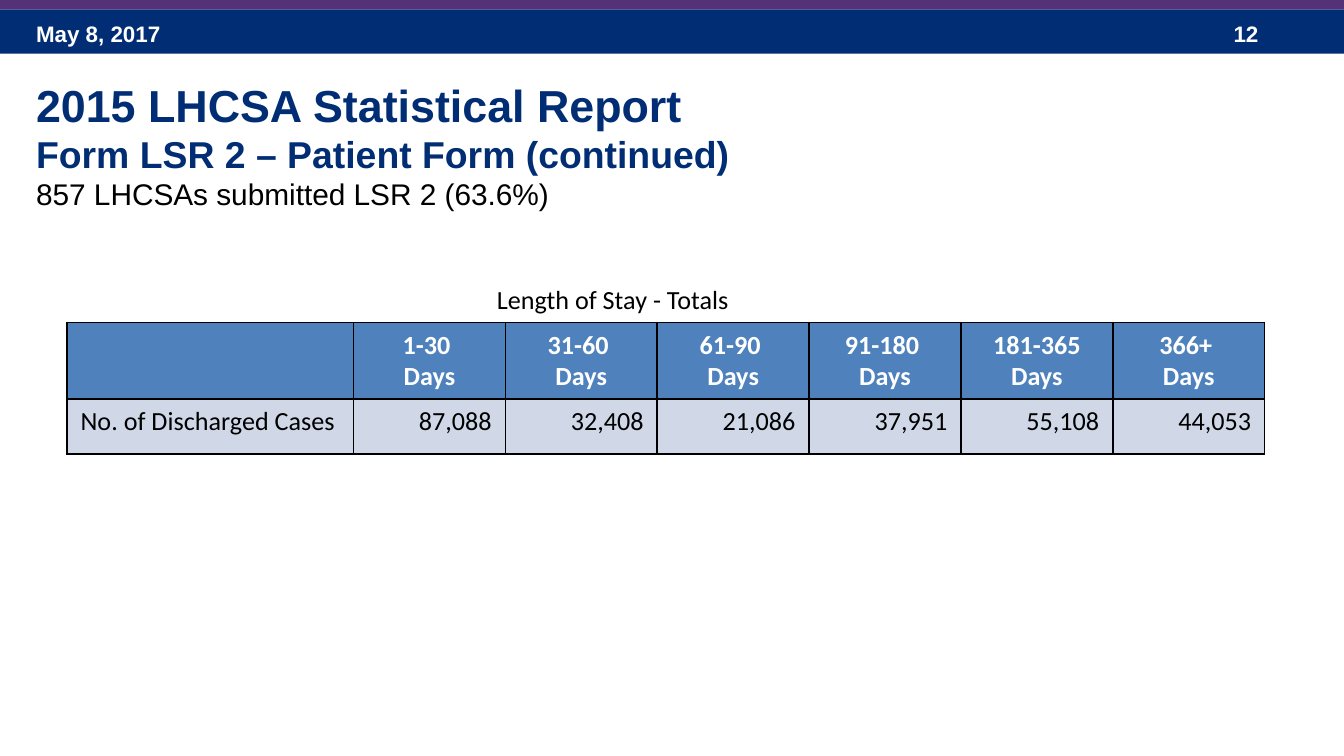
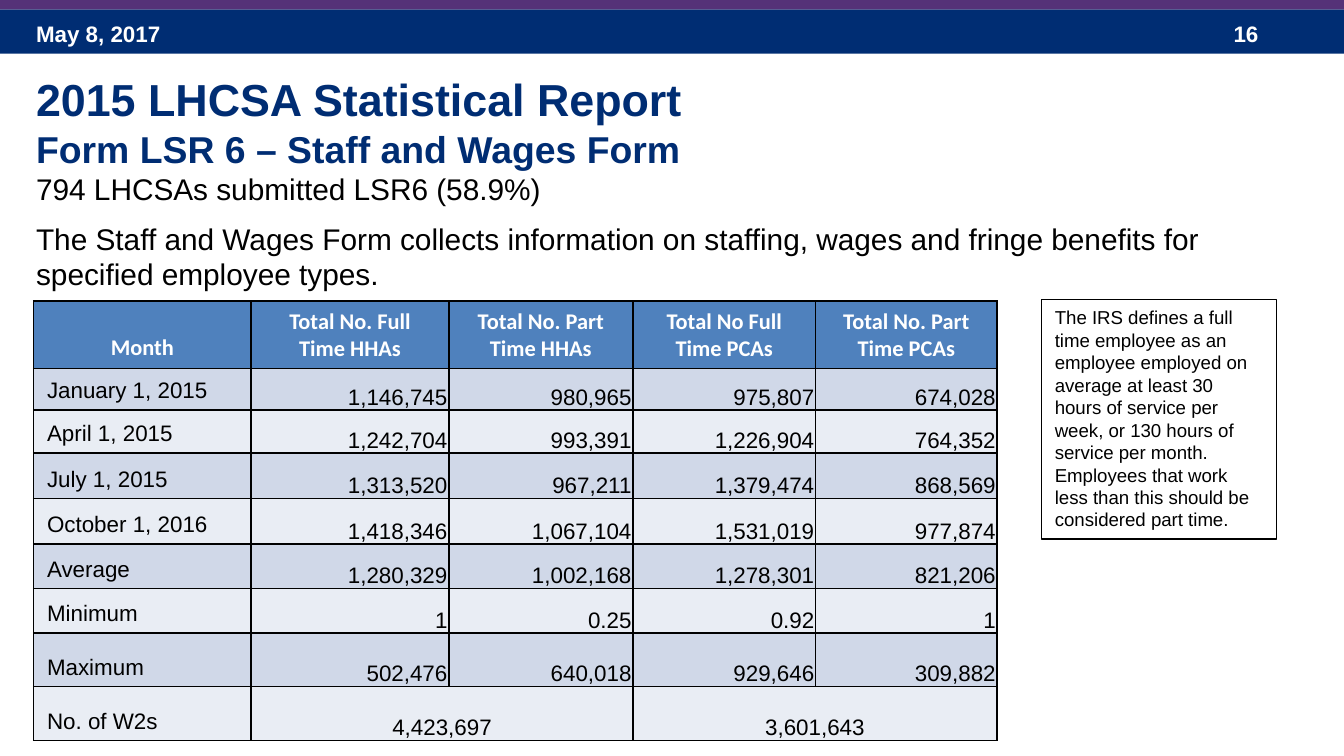
from dataclasses import dataclass

from lxml import etree
from pptx import Presentation
from pptx.dml.color import RGBColor
from pptx.enum.shapes import MSO_SHAPE
from pptx.enum.text import MSO_ANCHOR, PP_ALIGN
from pptx.oxml.ns import qn
from pptx.util import Inches, Pt

RECTANGLE = MSO_SHAPE.RECTANGLE
LEFT, CENTER, RIGHT = PP_ALIGN.LEFT, PP_ALIGN.CENTER, PP_ALIGN.RIGHT
TOP, MIDDLE, BOTTOM = MSO_ANCHOR.TOP, MSO_ANCHOR.MIDDLE, MSO_ANCHOR.BOTTOM


@dataclass(frozen=True)
class Theme:
    navy: str = "002D73"
    purple: str = "553278"
    white: str = "FFFFFF"
    black: str = "000000"
    header: str = "4F81BD"
    bands: tuple = ("D0D8E8", "E9EDF4")
    body_font: str = "Arial"
    table_font: str = "Calibri"
    title: int = 24
    subtitle: int = 20
    body: int = 16
    table: int = 14
    small: int = 12
    note: int = 10


THEME = Theme()


def style(size, color=THEME.black, bold=False, name=THEME.body_font):
    return {"size": Pt(size), "bold": bold, "name": name, "color": color}


BAND_STYLE = style(THEME.small, THEME.white, True)
TITLE_STYLES = (style(THEME.title, THEME.navy, True),
                style(THEME.subtitle, THEME.navy, True),
                style(THEME.body))


def write(frame, lines, styles, align=LEFT):
    """Fill a text frame, one paragraph and one style per line."""
    for index, (line, look) in enumerate(zip(lines, styles)):
        para = frame.paragraphs[0] if index == 0 else frame.add_paragraph()
        para.alignment = align
        span = para.add_run()
        span.text = line
        for key, value in look.items():
            if key == "color":
                span.font.color.rgb = RGBColor.from_string(value)
            else:
                setattr(span.font, key, value)


def add_text(page, box, lines, styles, align=LEFT, anchor=TOP):
    frame = page.shapes.add_textbox(*map(Inches, box)).text_frame
    frame.word_wrap = True
    frame.vertical_anchor = anchor
    write(frame, lines, styles, align)


def add_rectangle(page, box, fill=None, line=None):
    shape = page.shapes.add_shape(RECTANGLE, *map(Inches, box))
    shape.shadow.inherit = False
    if fill:
        shape.fill.solid()
        shape.fill.fore_color.rgb = RGBColor.from_string(fill)
    else:
        shape.fill.background()
    if line:
        shape.line.color.rgb = RGBColor.from_string(line)
        shape.line.width = Pt(0.75)
    else:
        shape.line.fill.background()
    return shape


def add_page(deck, number, title_top, title_lines):
    """Blank page with the top bands, date, number and title block."""
    page = deck.slides.add_slide(deck.slide_layouts[6])
    # Top bands
    add_rectangle(page, (0, 0.07, 10, 0.33), THEME.navy)
    for left, width, label in ((0.17, 2.33, "May 8, 2017"), (9.08, 0.75, str(number))):
        add_text(page, (left, 0.1, width, 0.3), [label], [BAND_STYLE], anchor=MIDDLE)
    add_rectangle(page, (0, -0.02, 10, 0.09), THEME.purple)
    # Title block
    add_text(page, (0.17, title_top, 9.5, 1.11), title_lines, TITLE_STYLES, anchor=MIDDLE)
    return page


def paint_cell(cell, fill):
    """Black one-point borders and a solid fill."""
    properties = cell._tc.get_or_add_tcPr()
    for side in ("a:lnL", "a:lnR", "a:lnT", "a:lnB"):
        border = etree.SubElement(properties, qn(side), w=str(Pt(1)))
        solid = etree.SubElement(border, qn("a:solidFill"))
        etree.SubElement(solid, qn("a:srgbClr"), val=THEME.black)
    cell.fill.solid()
    cell.fill.fore_color.rgb = RGBColor.from_string(fill)


def add_grid(page, left, top, widths, heights, rows, head, body, anchor=TOP, tight=False):
    """Table with a header row, label column and numbers; None joins the cell to its left."""
    box = (left, top, sum(widths), sum(heights))
    table = page.shapes.add_table(len(rows), len(widths), *map(Inches, box)).table
    for column, width in zip(table.columns, widths):
        column.width = Inches(width)
    for row, height in zip(table.rows, heights):
        row.height = Inches(height)
    for r, values in enumerate(rows):
        for c, value in enumerate(values):
            cell = table.cell(r, c)
            paint_cell(cell, THEME.bands[(r - 1) % 2] if r else THEME.header)
            cell.vertical_anchor = anchor
            if value is None:
                table.cell(r, c - 1).merge(cell)
                continue
            joined = c + 1 < len(values) and values[c + 1] is None
            align = CENTER if r == 0 or joined else RIGHT if c else LEFT
            if tight and r and c:
                for side in ("left", "right", "top"):
                    setattr(cell, f"margin_{side}", Inches(0.01))
                cell.margin_bottom = 0
            if value:
                lines = value.split("\n")
                write(cell.text_frame, lines, [body if r else head] * len(lines), align)


def add_note(page, box, text):
    """Outlined note beside the table."""
    frame = add_rectangle(page, box, line=THEME.black).text_frame
    frame.word_wrap = True
    frame.vertical_anchor = TOP
    write(frame, [text], [style(THEME.note)])


def build_stay_page(deck):
    page = add_page(deck, 12, 0.52, (
        "2015 LHCSA Statistical Report",
        "Form LSR 2 – Patient Form (continued)",
        "857 LHCSAs submitted LSR 2 (63.6%)"))
    # Length of stay table and its caption
    rows = (
        ("", "1-30 \nDays", "31-60 \nDays", "61-90 \nDays", "91-180 \nDays",
         "181-365 Days", "366+ \nDays"),
        ("No. of Discharged Cases", "87,088", "32,408", "21,086", "37,951", "55,108", "44,053"))
    body = style(THEME.table, name=THEME.table_font)
    head = style(THEME.table, THEME.white, True, THEME.table_font)
    add_grid(page, 0.5, 2.4, [2.13] + [1.13] * 6, [0.56, 0.41], rows, head, body)
    add_text(page, (0.5, 2.06, 8.12, 0.34), ["Length of Stay - Totals"], [body], CENTER)


def build_wages_page(deck):
    page = add_page(deck, 16, 0.48, (
        "2015 LHCSA Statistical Report",
        "Form LSR 6 – Staff and Wages Form",
        "794 LHCSAs submitted LSR6 (58.9%)"))
    # Introduction
    add_text(page, (0.17, 1.59, 9.58, 0.64), [
        "The Staff and Wages Form collects information on staffing, wages and "
        "fringe benefits for specified employee types."], [style(THEME.body)])
    # Staffing table
    rows = (
        ("Month", "Total No. Full Time HHAs", "Total No. Part Time HHAs",
         "Total No Full Time PCAs", "Total No. Part Time PCAs"),
        ("January 1, 2015", "1,146,745", "980,965", "975,807", "674,028"),
        ("April 1, 2015", "1,242,704", "993,391", "1,226,904", "764,352"),
        ("July 1, 2015", "1,313,520", "967,211", "1,379,474", "868,569"),
        ("October 1, 2016", "1,418,346", "1,067,104", "1,531,019", "977,874"),
        ("Average", "1,280,329", "1,002,168", "1,278,301", "821,206"),
        ("Minimum", "1", "0.25", "0.92", "1"),
        ("Maximum", "502,476", "640,018", "929,646", "309,882"),
        ("No. of W2s", "4,423,697", None, "3,601,643", None))
    add_grid(page, 0.25, 2.24, [1.62, 1.47, 1.37, 1.36, 1.35],
             [0.5, 0.31, 0.32, 0.34, 0.34, 0.33, 0.33, 0.4, 0.4], rows,
             style(THEME.small, THEME.white, True, THEME.table_font),
             style(THEME.small), BOTTOM, tight=True)
    # Full time definition
    add_note(page, (7.75, 2.23, 1.75, 1.78),
             "The IRS defines a full time employee as an employee employed on average "
             "at least 30 hours of service per week, or 130 hours of service per month. "
             "Employees that work less than this should be considered part time.")


def main():
    deck = Presentation()
    # Widescreen, sixteen by nine
    deck.slide_width = Inches(10)
    deck.slide_height = deck.slide_width * 9 // 16
    build_stay_page(deck)
    build_wages_page(deck)
    deck.save("out.pptx")


if __name__ == "__main__":
    main()
